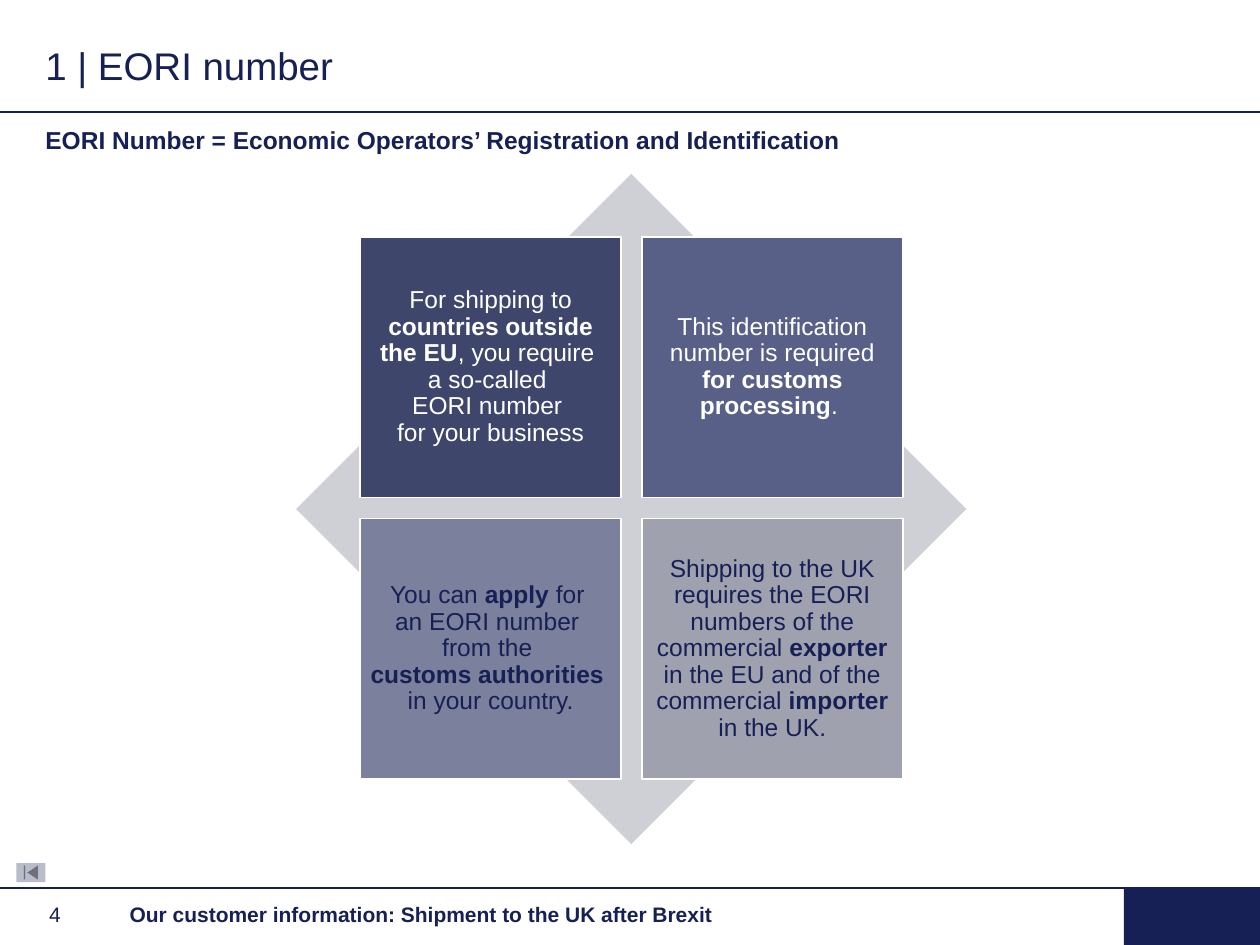
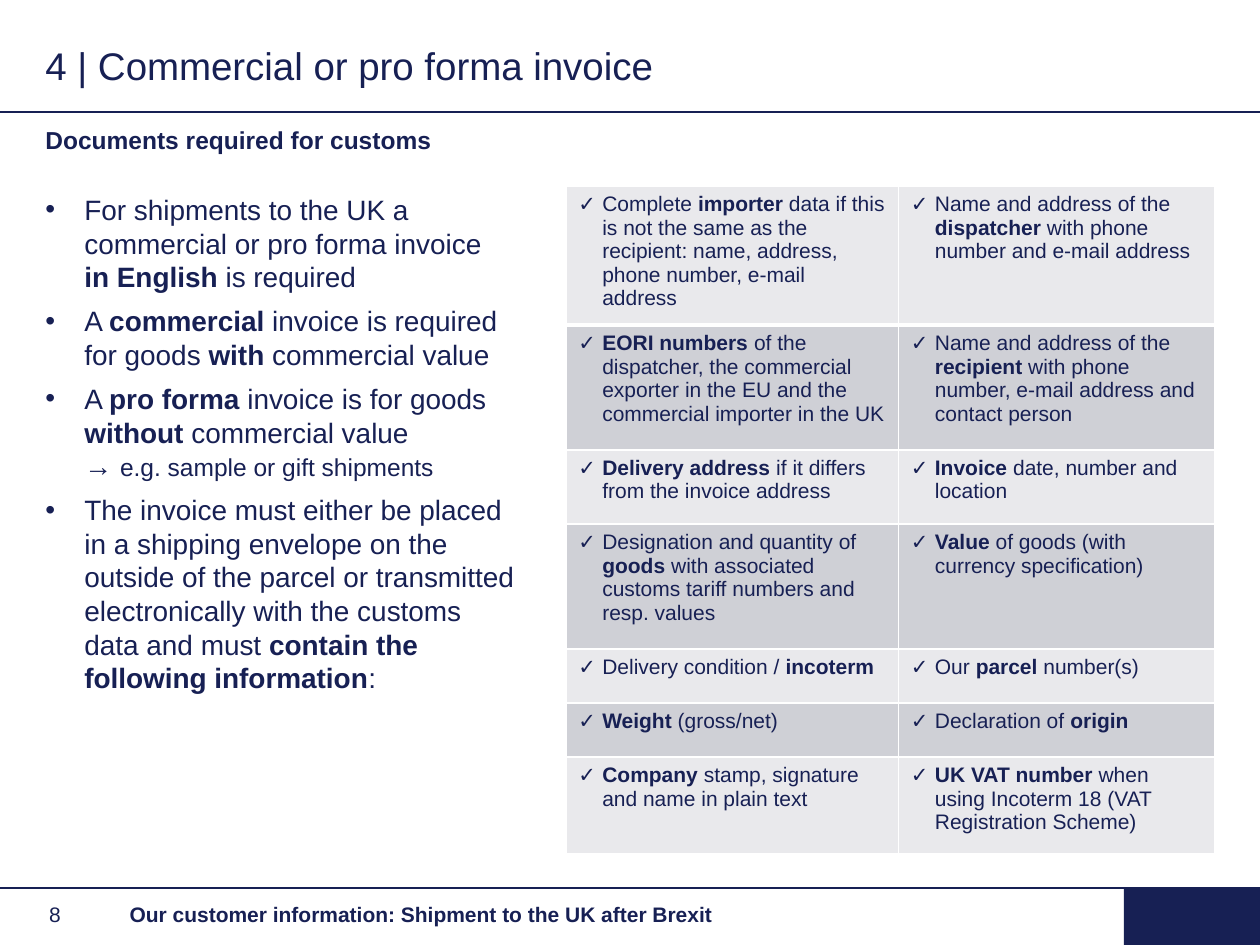
from lxml.etree import SubElement
from pptx import Presentation
from pptx.dml.color import RGBColor
from pptx.enum.shapes import MSO_CONNECTOR, MSO_SHAPE
from pptx.enum.text import MSO_ANCHOR, PP_ALIGN
from pptx.oxml import parse_xml
from pptx.oxml.ns import nsdecls, qn
from pptx.util import Inches, Pt

NAVY, WHITE = "172054", "FFFFFF"
PALE, GREY = "E9E9EC", "CFD0D6"
FONT = "Arial"
LEFT_INSET = (0, 0.05, 0.1, 0.05)
DEFAULT_INSET = (0.1, 0.05, 0.1, 0.05)
FOOTER = "Our customer information: Shipment to the UK after Brexit"

# In all texts ** switches bold on and off.
EORI_FACTS = [
    ("For shipping to **countries outside the EU**, you require \na so-called \n"
     "EORI number \nfor your business", "3F466B", WHITE),
    ("This identification number is required **for customs processing**. ",
     "596087", WHITE),
    ("You can **apply** for \nan EORI number \nfrom the \n"
     "**customs authorities \n**in your country.", "7B809D", NAVY),
    ("Shipping to the UK requires the EORI numbers of the commercial **exporter**"
     " in the EU and of the commercial **importer** in the UK.", "9FA1AF", NAVY),
]

INVOICE_RULES = [
    "For shipments to the UK a commercial or pro forma invoice \n"
    "**in English **is required",
    "A **commercial** invoice is required for goods **with** commercial value",
    "A **pro forma **invoice is for goods **without** commercial value\n→ ",
    "The invoice must either be placed in a shipping envelope on the outside of "
    "the parcel or transmitted electronically with the customs data and must "
    "**contain the following information**:",
]
SAMPLE_NOTE = "e.g. sample or gift shipments"

INVOICE_CONTENT = [
    (0.99, "Complete **importer** data if this is not the same as the recipient: "
           "name, address, phone number, e-mail address",
     "Name and address of the **dispatcher** with phone number and e-mail address"),
    (0.99, "**EORI numbers **of the dispatcher, the commercial exporter in the EU "
           "and the commercial importer in the UK",
     "Name and address of the **recipient** with phone number, e-mail address and "
     "contact person"),
    (0.59, "**Delivery address **if it differs from the invoice address",
     "**Invoice** date, number and location"),
    (0.99, "Designation and quantity of **goods** with associated customs tariff "
           "numbers and resp. values",
     "**Value** of goods (with currency specification)"),
    (0.43, "Delivery condition / **incoterm**", "Our **parcel** number(s)"),
    (0.43, "**Weight** (gross/net)", "Declaration of **origin**"),
    (0.77, "**Company** stamp, signature and name in plain text",
     "**UK VAT number **when using Incoterm 18 (VAT Registration Scheme)"),
]


def rgb(color):
    return RGBColor.from_string(color)


def add_run(paragraph, text, size, color, bold=False):
    run = paragraph.add_run()
    run.text = text
    run.font.name = FONT
    run.font.size = Pt(size)
    run.font.bold = bold
    run.font.color.rgb = rgb(color)


def write(paragraph, marked_text, size, color=NAVY):
    """Add runs, reading ** as a bold switch and a newline as a line break."""
    for part, text in enumerate(marked_text.split("**")):
        for line, words in enumerate(text.split("\n")):
            if line:
                paragraph.add_line_break()
            if words:
                add_run(paragraph, words, size, color, bold=part % 2 == 1)


def set_bullet(paragraph, mark, indent):
    properties = paragraph._p.get_or_add_pPr()
    properties.set("marL", str(Inches(indent)))
    properties.set("indent", str(-Inches(indent)))
    SubElement(properties, qn("a:buFont")).set("typeface", FONT)
    SubElement(properties, qn("a:buChar")).set("char", mark)


def set_frame(frame, insets, anchor):
    frame.word_wrap = True
    frame.vertical_anchor = anchor
    (frame.margin_left, frame.margin_top,
     frame.margin_right, frame.margin_bottom) = map(Inches, insets)


def add_text(slide, box, text, size, insets=LEFT_INSET, anchor=MSO_ANCHOR.MIDDLE):
    frame = slide.shapes.add_textbox(*map(Inches, box)).text_frame
    set_frame(frame, insets, anchor)
    write(frame.paragraphs[0], text, size)
    return frame


def add_block(slide, kind, box, fill, outline=None):
    block = slide.shapes.add_shape(kind, *map(Inches, box))
    block.shadow.inherit = False
    block.fill.solid()
    block.fill.fore_color.rgb = rgb(fill)
    if outline:
        block.line.color.rgb = rgb(outline)
        block.line.width = Pt(1)
    else:
        block.line.fill.background()
    return block


def add_rule(slide, y):
    rule = slide.shapes.add_connector(
        MSO_CONNECTOR.STRAIGHT, 0, Inches(y), Inches(10), Inches(y))
    rule.line.color.rgb = rgb(NAVY)
    rule.line.width = Pt(1)
    SubElement(rule._element.spPr, qn("a:effectLst"))


def add_page(deck, title, subtitle, number):
    """Add a slide with the shared rules, title, subtitle and footer."""
    slide = deck.slides.add_slide(deck.slide_layouts[6])
    add_rule(slide, 0.89)
    add_rule(slide, 7.05)
    add_block(slide, MSO_SHAPE.RECTANGLE, (8.92, 7.05, 1.08, 0.45), NAVY)
    add_text(slide, (0.36, 0.28, 9.29, 0.47), title, 22)
    add_text(slide, (0.93, 7.13, 5.95, 0.25), f"**{FOOTER}**", 12, DEFAULT_INSET)
    add_text(slide, (0.39, 7.13, 0.54, 0.25), number, 12)
    add_text(slide, (0.36, 0.94, 9.29, 0.25), f"**{subtitle}**", 14,
             anchor=MSO_ANCHOR.TOP)
    return slide


def add_fact_matrix(slide):
    """Place the four facts two by two on a diamond."""
    left, top, side = 2.86, 1.88, 2.07
    pitch = 2.235
    add_block(slide, MSO_SHAPE.DIAMOND, (2.35, 1.38, 5.32, 5.32), GREY)
    for index, (fact, fill, color) in enumerate(EORI_FACTS):
        row, column = divmod(index, 2)
        box = (left + column * pitch, top + row * pitch, side, side)
        frame = add_block(slide, MSO_SHAPE.RECTANGLE, box, fill, WHITE).text_frame
        set_frame(frame, (0.08,) * 4, MSO_ANCHOR.MIDDLE)
        paragraph = frame.paragraphs[0]
        paragraph.alignment = PP_ALIGN.CENTER
        paragraph.line_spacing = 0.9
        write(paragraph, fact, 14, color)


def add_invoice_rules(slide):
    frame = slide.shapes.add_textbox(
        *map(Inches, (0.36, 1.48, 3.89, 5.23))).text_frame
    set_frame(frame, LEFT_INSET, MSO_ANCHOR.TOP)
    for index, rule in enumerate(INVOICE_RULES):
        paragraph = frame.add_paragraph() if index else frame.paragraphs[0]
        if index:
            paragraph.space_before = Pt(6)
        set_bullet(paragraph, "•", 0.31)
        write(paragraph, rule, 16)
        if rule.endswith("→ "):
            add_run(paragraph, SAMPLE_NOTE, 14, NAVY)


def set_borders(cell, top, bottom):
    """Draw white cell borders; top and bottom are widths in points."""
    properties = cell._tc.get_or_add_tcPr()
    widths = {"lnL": 1, "lnR": 1, "lnT": top, "lnB": bottom}
    for position, (edge, width) in enumerate(widths.items()):
        properties.insert(position, parse_xml(
            f'<a:{edge} {nsdecls("a")} w="{Pt(width)}"><a:solidFill>'
            f'<a:srgbClr val="{WHITE}"/></a:solidFill></a:{edge}>'))


def add_content_table(slide):
    table = slide.shapes.add_table(
        len(INVOICE_CONTENT), 2,
        *map(Inches, (4.49, 1.48, 5.15, 5.18))).table
    table.first_row = table.horz_banding = False
    for column, width in zip(table.columns, (2.64, 2.51)):
        column.width = Inches(width)
    for index, (height, *entries) in enumerate(INVOICE_CONTENT):
        table.rows[index].height = Inches(height)
        for column, entry in enumerate(entries):
            cell = table.cell(index, column)
            cell.fill.solid()
            cell.fill.fore_color.rgb = rgb(GREY if index % 2 else PALE)
            set_borders(cell, top=3 if index == 1 else 1,
                        bottom=3 if index == 0 else 1)
            paragraph = cell.text_frame.paragraphs[0]
            set_bullet(paragraph, "✓", 0.19)
            write(paragraph, entry, 12)


def main():
    deck = Presentation()
    deck.slide_width, deck.slide_height = Inches(10), Inches(7.5)

    eori = add_page(
        deck, "1 | EORI number",
        "EORI Number = Economic Operators’ Registration and Identification", "4")
    add_fact_matrix(eori)
    add_block(eori, MSO_SHAPE.ACTION_BUTTON_BEGINNING,
              (0.13, 6.85, 0.23, 0.15), "B9BCCB")

    invoice = add_page(deck, "4 | Commercial or pro forma invoice",
                       "Documents required for customs", "8")
    add_invoice_rules(invoice)
    add_content_table(invoice)

    deck.save("out.pptx")


if __name__ == "__main__":
    main()
